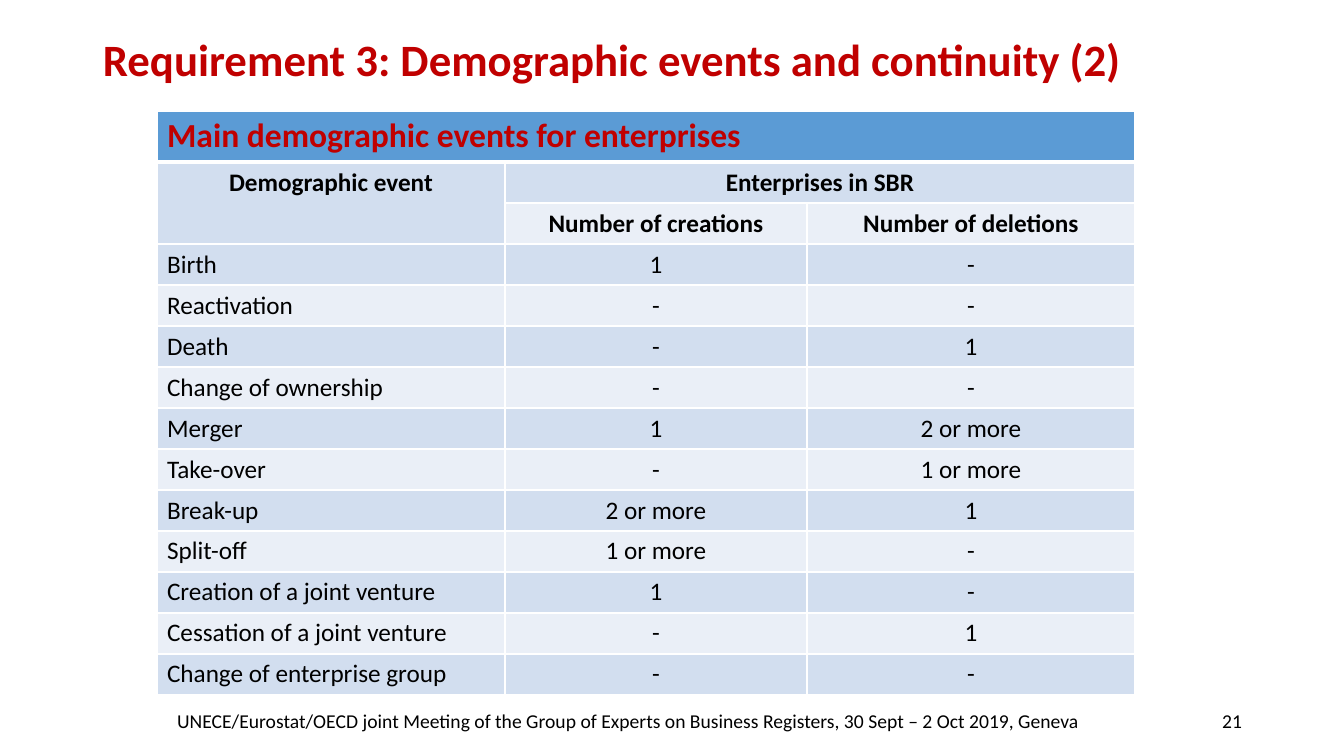
import dataclasses

import pptx
import pptx.dml.color
import pptx.enum.text
import pptx.oxml
import pptx.oxml.ns
import pptx.util

ALIGN = pptx.enum.text.PP_ALIGN
ANCHOR = pptx.enum.text.MSO_ANCHOR
EMU_PER_PX = 914400 / 100.8


@dataclasses.dataclass(frozen=True)
class Theme:
    font: str = "Calibri"
    red: str = "C00000"
    black: str = "000000"
    white: str = "FFFFFF"
    header: str = "5B9BD5"
    bands: tuple = ("EAEFF7", "D2DEEF")
    title_size: int = 32
    header_size: int = 24
    body_size: int = 18
    footer_size: int = 14
    rule: int = 1
    header_rule: int = 3


THEME = Theme()
COLUMN_WIDTHS = (348, 302, 328)
HEADER_HEIGHT, ROW_HEIGHT = 51, 41
HEADING_ROWS = 3
EVENT_ROWS = (
    ("Main demographic events for enterprises", "", ""),
    ("Demographic event", "Enterprises in SBR", ""),
    ("", "Number of creations", "Number of deletions"),
    ("Birth", "1", "-"),
    ("Reactivation", "-", "-"),
    ("Death", "-", "1"),
    ("Change of ownership", "-", "-"),
    ("Merger", "1", "2 or more"),
    ("Take-over", "-", "1 or more"),
    ("Break-up", "2 or more", "1"),
    ("Split-off", "1 or more", "-"),
    ("Creation of a joint venture", "1", "-"),
    ("Cessation of a joint venture", "-", "1"),
    ("Change of enterprise group", "-", "-"),
)
# Top-left and bottom-right (row, column) of each merged area
MERGES = (((0, 0), (0, 2)), ((1, 0), (2, 0)), ((1, 1), (1, 2)))


def px(length):
    return pptx.util.Emu(round(length * EMU_PER_PX))


def rgb(value):
    return pptx.dml.color.RGBColor.from_string(value)


def write(text_frame, text, size, color=THEME.black, bold=False, **paragraph_format):
    paragraph = text_frame.paragraphs[0]
    for name, value in paragraph_format.items():
        setattr(paragraph, name, value)
    run = paragraph.add_run()
    run.text = text
    font_format = {"name": THEME.font, "size": pptx.util.Pt(size), "bold": bold}
    for name, value in font_format.items():
        setattr(run.font, name, value)
    run.font.color.rgb = rgb(color)


def add_text(slide, box, text, size, **text_format):
    text_frame = slide.shapes.add_textbox(*map(px, box)).text_frame
    text_frame.word_wrap = True
    text_frame.vertical_anchor = ANCHOR.MIDDLE
    write(text_frame, text, size, **text_format)


def set_borders(cell, widths):
    properties = cell._tc.get_or_add_tcPr()
    for side, width in widths.items():
        properties.append(pptx.oxml.parse_xml(
            f'<a:{side} {pptx.oxml.ns.nsdecls("a")} w="{pptx.util.Pt(width)}">'
            f'<a:solidFill><a:srgbClr val="{THEME.white}"/></a:solidFill></a:{side}>'
        ))


def add_title(slide, box):
    add_text(slide, box, "Requirement 3: Demographic events and continuity (2)",
             THEME.title_size, color=THEME.red, bold=True, line_spacing=0.9)


def format_cell(cell, row, column, text):
    # Borders, with a heavier rule under the header row
    widths = dict.fromkeys(("lnL", "lnR", "lnT", "lnB"), THEME.rule)
    if row < 2:
        widths["lnT" if row else "lnB"] = THEME.header_rule
    set_borders(cell, widths)
    # Banded fill
    cell.fill.solid()
    cell.fill.fore_color.rgb = rgb(THEME.bands[row % 2] if row else THEME.header)
    if not text:
        return
    # Wording
    heading = row < HEADING_ROWS
    centred = column > 0 or 0 < row < HEADING_ROWS
    write(cell.text_frame, text,
          THEME.body_size if row else THEME.header_size,
          color=THEME.black if row else THEME.red, bold=heading,
          alignment=ALIGN.CENTER if centred else ALIGN.LEFT)


def add_event_table(slide, box):
    table = slide.shapes.add_table(
        len(EVENT_ROWS), len(COLUMN_WIDTHS), *map(px, box)).table
    table.first_row = table.horz_banding = False
    for column, width in zip(table.columns, COLUMN_WIDTHS):
        column.width = px(width)
    for index, row in enumerate(table.rows):
        row.height = px(ROW_HEIGHT if index else HEADER_HEIGHT)
    for start, end in MERGES:
        table.cell(*start).merge(table.cell(*end))
    for row, texts in enumerate(EVENT_ROWS):
        for column, text in enumerate(texts):
            format_cell(table.cell(row, column), row, column, text)


def add_footer(slide, box):
    left, top, width, height = box
    # Meeting name
    add_text(slide, (left, top, 991, height),
             "UNECE/Eurostat/OECD joint Meeting of the Group of Experts on "
             "Business Registers, 30 Sept – 2 Oct 2019, Geneva",
             THEME.footer_size, alignment=ALIGN.CENTER)
    # Slide number
    number_width = 302
    add_text(slide, (left + width - number_width, top, number_width, height),
             "21", THEME.footer_size, alignment=ALIGN.RIGHT)


def main():
    presentation = pptx.Presentation()
    presentation.slide_width, presentation.slide_height = px(1344), px(756)
    slide = presentation.slides.add_slide(presentation.slide_layouts[6])
    add_title(slide, (93, 24, 1159, 77))
    add_footer(slide, (133, 701, 1119, 40))
    table_height = HEADER_HEIGHT + ROW_HEIGHT * (len(EVENT_ROWS) - 1)
    add_event_table(slide, (157, 111, sum(COLUMN_WIDTHS), table_height))
    presentation.save("out.pptx")


if __name__ == "__main__":
    main()
